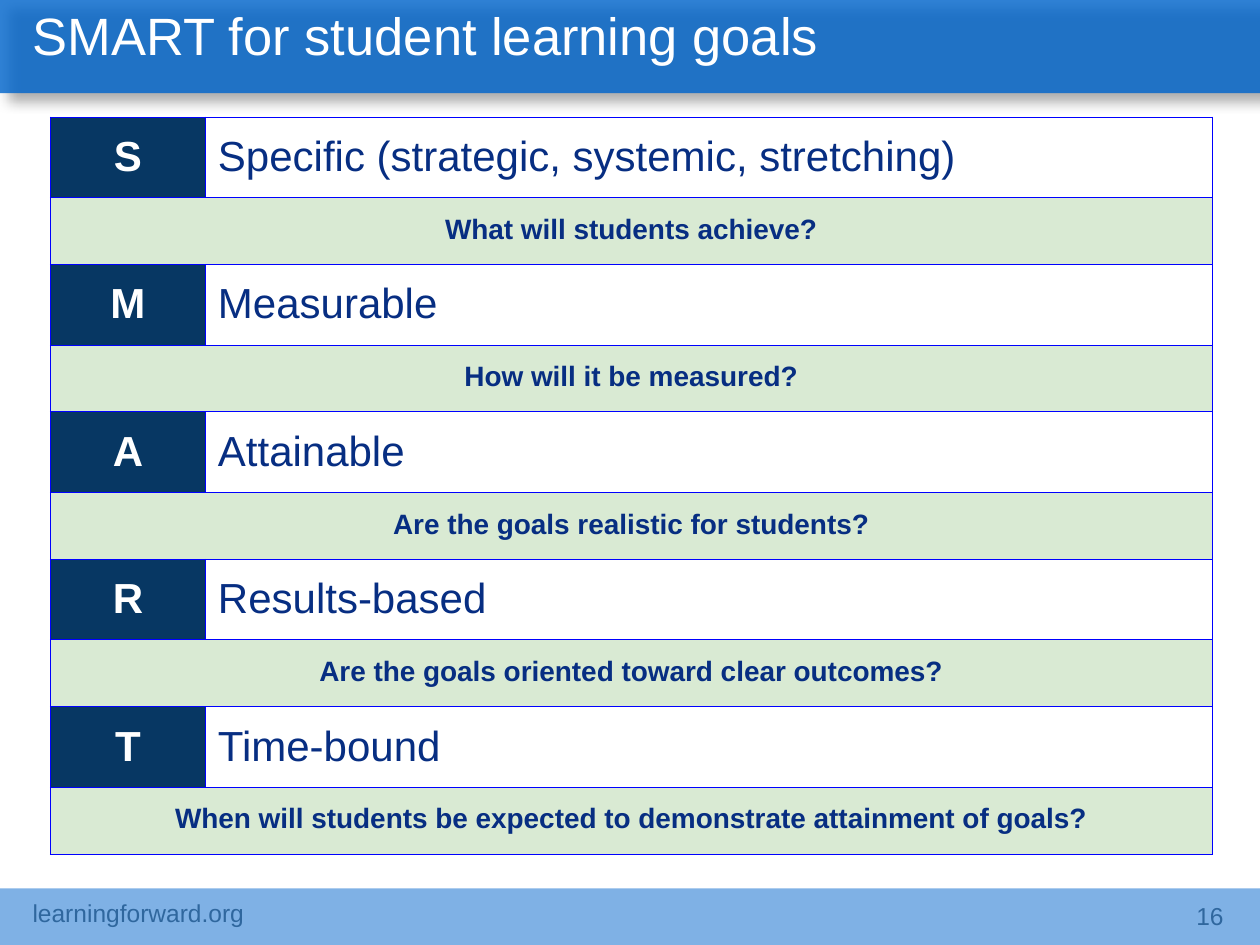
from lxml.etree import SubElement
from pptx import Presentation
from pptx.dml.color import RGBColor
from pptx.enum.shapes import MSO_SHAPE
from pptx.enum.text import MSO_ANCHOR, MSO_AUTO_SIZE, PP_ALIGN
from pptx.oxml import parse_xml
from pptx.oxml.ns import nsdecls, qn
from pptx.util import Inches, Pt

TITLE = "SMART for student learning goals"
GOALS = [
    ("S", "Specific (strategic, systemic, stretching)", "What will students achieve?"),
    ("M", "Measurable", "How will it be measured?"),
    ("A", "Attainable", "Are the goals realistic for students?"),
    ("R", "Results-based", "Are the goals oriented toward clear outcomes?"),
    ("T", "Time-bound", "When will students be expected to demonstrate attainment of goals?"),
]
FOOTERS = [
    ("learningforward.org", (0.16, 7.08, 3.38, 0.4), PP_ALIGN.LEFT),
    ("16", (7.56, 7.1, 2.25, 0.4), PP_ALIGN.RIGHT),
]
BLUE, WHITE, NAVY, INK = "0065CC", "FFFFFF", "073763", "072E82"
GREEN, FOOTER_INK, BORDER = "D9EAD3", "2F679E", "0000FF"
GOAL_HEIGHT, QUESTION_HEIGHT = 0.64, 0.53
COLUMN_WIDTHS = (1.23, 7.99)
SHADOW = f"""<a:effectLst {nsdecls('a')}>
  <a:outerShdw blurRad="88900" dist="88900" dir="2700000" rotWithShape="0">
    <a:srgbClr val="000000"><a:alpha val="40000"/></a:srgbClr>
  </a:outerShdw>
</a:effectLst>"""


def color(target, value):
    target.rgb = RGBColor.from_string(value)


def write(frame, text, size, ink, align=PP_ALIGN.LEFT, bold=False):
    frame.text = text
    paragraph = frame.paragraphs[0]
    paragraph.alignment = align
    font = paragraph.runs[0].font
    font.name, font.size, font.bold = "Arial", Pt(size), bold
    color(font.color, ink)
    return paragraph


def add_band(slide, box, opacity):
    band = slide.shapes.add_shape(MSO_SHAPE.RECTANGLE, *map(Inches, box))
    band.shadow.inherit = False
    band.line.fill.background()
    band.fill.solid()
    color(band.fill.fore_color, BLUE)
    fill_color = band.element.spPr.find(f"{qn('a:solidFill')}/{qn('a:srgbClr')}")
    SubElement(fill_color, qn("a:alpha"), val=str(opacity * 1000))
    return band


def style_cell(cell, fill):
    cell.margin_left = cell.margin_right = Inches(0.1)
    cell.margin_top = cell.margin_bottom = Inches(0.13)
    properties = cell._tc.get_or_add_tcPr()
    for side in ("lnL", "lnR", "lnT", "lnB"):
        line = SubElement(properties, qn(f"a:{side}"), w=str(Pt(0.75)))
        line_fill = SubElement(line, qn("a:solidFill"))
        SubElement(line_fill, qn("a:srgbClr"), val=BORDER)
    cell.fill.solid()
    color(cell.fill.fore_color, fill)


def add_goals(slide):
    height = len(GOALS) * (GOAL_HEIGHT + QUESTION_HEIGHT)
    table = slide.shapes.add_table(
        2 * len(GOALS), 2, Inches(0.4), Inches(0.93),
        Inches(sum(COLUMN_WIDTHS)), Inches(height)).table
    table.first_row = table.horz_banding = False
    for column, width in zip(table.columns, COLUMN_WIDTHS):
        column.width = Inches(width)
    for index, (letter, goal, question) in enumerate(GOALS):
        top = 2 * index
        table.rows[top].height = Inches(GOAL_HEIGHT)
        table.rows[top + 1].height = Inches(QUESTION_HEIGHT)
        for row, column, fill in ((top, 0, NAVY), (top, 1, WHITE),
                                  (top + 1, 0, GREEN), (top + 1, 1, GREEN)):
            style_cell(table.cell(row, column), fill)
        table.cell(top + 1, 0).merge(table.cell(top + 1, 1))
        write(table.cell(top, 0).text_frame, letter, 24, WHITE, PP_ALIGN.CENTER, True)
        write(table.cell(top, 1).text_frame, goal, 24, INK)
        write(table.cell(top + 1, 0).text_frame, question, 16, INK, PP_ALIGN.CENTER, True)


def add_title(slide):
    title = slide.shapes.title
    title.left, title.top, title.width, title.height = map(Inches, (0.26, 0.08, 9.68, 0.73))
    frame = title.text_frame
    frame.margin_left = frame.margin_right = frame.margin_top = frame.margin_bottom = 0
    frame.vertical_anchor = MSO_ANCHOR.TOP
    frame.auto_size = MSO_AUTO_SIZE.NONE
    write(frame, TITLE, 30, WHITE).line_spacing = 0.9
    title.element.getparent().append(title.element)


def main():
    """Build the SMART goals slide."""
    presentation = Presentation()
    presentation.slide_width, presentation.slide_height = Inches(10), Inches(7.5)
    slide = presentation.slides.add_slide(presentation.slide_layouts[5])
    add_band(slide, (0, 7.05, 10, 0.46), 50)
    header = add_band(slide, (0, 0, 10.04, 0.74), 81)
    properties = header.element.spPr
    properties.replace(properties.find(qn("a:effectLst")), parse_xml(SHADOW))
    add_title(slide)
    add_goals(slide)
    for text, box, align in FOOTERS:
        footer = slide.shapes.add_textbox(*map(Inches, box)).text_frame
        footer.word_wrap = True
        write(footer, text, 14, FOOTER_INK, align)
    presentation.save("out.pptx")


if __name__ == "__main__":
    main()
